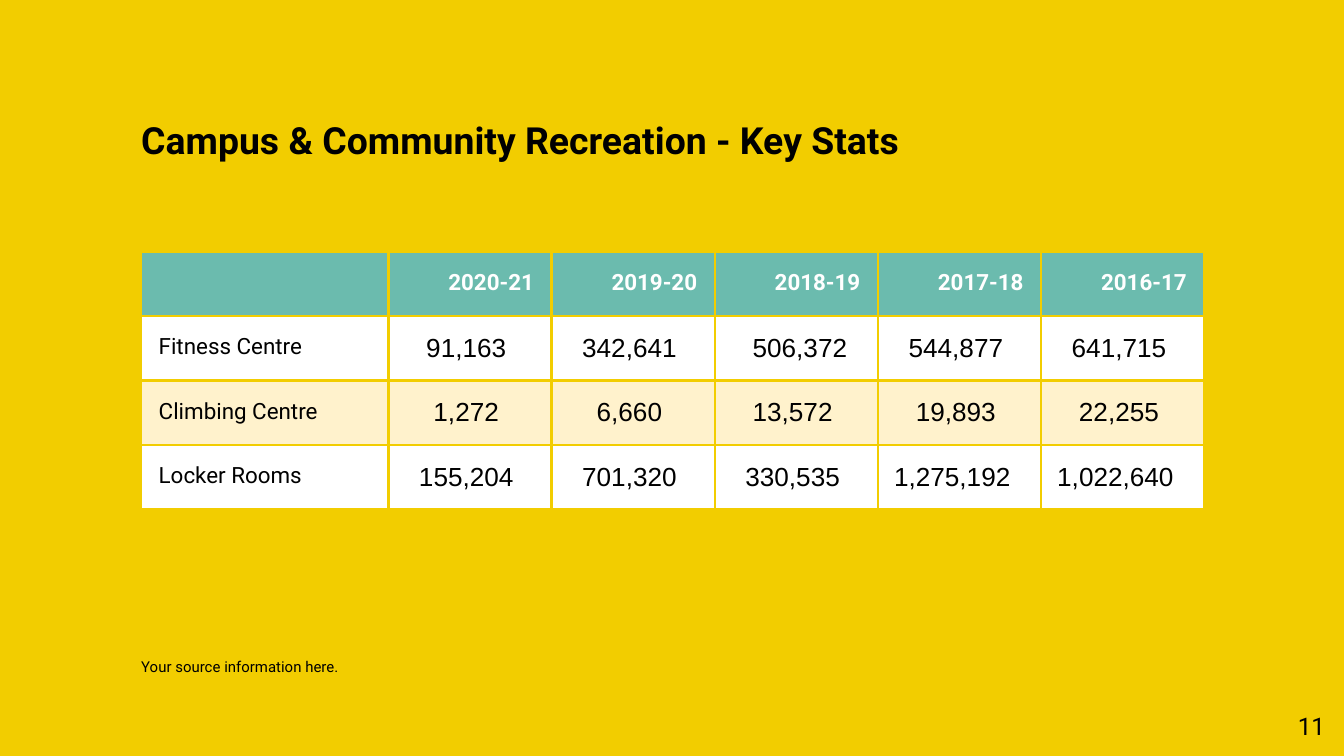
from lxml.etree import SubElement
from pptx import Presentation
from pptx.dml.color import RGBColor
from pptx.enum.text import MSO_ANCHOR, PP_ALIGN
from pptx.oxml.ns import qn
from pptx.util import Cm, Pt

YELLOW, TEAL, CREAM, WHITE, BLACK = "F2CD00", "6BBBAE", "FFF2CC", "FFFFFF", "000000"

TITLE = "Campus & Community Recreation - Key Stats"
SOURCE = "Your source information here."
PAGE_NUMBER = "11"
ROWS = [
    ["", "2020-21", "2019-20", "2018-19", "2017-18", "2016-17"],
    ["Fitness Centre", "91,163", "342,641", "506,372", "544,877", "641,715"],
    ["Climbing Centre", "1,272", "6,660", "13,572", "19,893", "22,255"],
    ["Locker Rooms", "155,204", "701,320", "330,535", "1,275,192", "1,022,640"],
]
ROW_FILLS = [TEAL, WHITE, CREAM, WHITE]
EXTRA_INDENT = {(1, 3): 1}  # cells set further in, in comma widths

LEFT, WIDTH = 2.67, 20.09
TABLE_TOP, ROW_HEIGHT = 4.75, 1.22
LABEL_WIDTH, YEAR_WIDTH = 4.67, 3.084
SMALL_INSET, WIDE_INSET = 0.03, 0.33
COMMA_WIDTH = 0.137  # a comma in Arial 14; a digit is twice as wide


def color(value):
    return RGBColor.from_string(value)


def format_text(text_frame, size, font="Roboto", fill=BLACK, bold=False,
                align=PP_ALIGN.LEFT, line_spacing=None):
    for paragraph in text_frame.paragraphs:
        paragraph.alignment = align
        if line_spacing:
            paragraph.line_spacing = line_spacing
        for run in paragraph.runs:
            run.font.name = font
            run.font.size = Pt(size)
            run.font.bold = bold
            run.font.color.rgb = color(fill)


def add_text(slide, text, left, top, width, height, size, inset=0,
             anchor=MSO_ANCHOR.TOP, **style):
    text_frame = slide.shapes.add_textbox(Cm(left), Cm(top), Cm(width), Cm(height)).text_frame
    text_frame.word_wrap = True
    text_frame.vertical_anchor = anchor
    text_frame.margin_left = text_frame.margin_right = Cm(inset)
    text_frame.margin_top = text_frame.margin_bottom = Cm(inset)
    text_frame.text = text
    format_text(text_frame, size, **style)


def add_borders(cell):
    properties = cell._tc.get_or_add_tcPr()
    for position, side in enumerate(("lnL", "lnR", "lnT", "lnB")):
        line = SubElement(properties, qn(f"a:{side}"), w=str(Pt(1.5)))
        fill = SubElement(line, qn("a:solidFill"))
        SubElement(fill, qn("a:srgbClr"), val=YELLOW)
        properties.insert(position, line)  # borders come before the fill


def fill_cell(cell, text, row, column):
    cell.fill.solid()
    cell.fill.fore_color.rgb = color(ROW_FILLS[row])
    add_borders(cell)
    cell.vertical_anchor = MSO_ANCHOR.MIDDLE
    cell.margin_top = cell.margin_bottom = Cm(SMALL_INSET)
    left, right = SMALL_INSET, WIDE_INSET
    style = {"size": 12, "line_spacing": 0.85}
    if row == 0:
        style.update(fill=WHITE, bold=True, align=PP_ALIGN.RIGHT)
    elif column == 0:
        left, right = WIDE_INSET, SMALL_INSET
    else:
        # Shorter numbers start further in, which keeps them about centred
        left += (11 - len(text) + EXTRA_INDENT.get((row, column), 0)) * COMMA_WIDTH
        style = {"size": 14, "font": "Arial"}
    cell.margin_left, cell.margin_right = Cm(left), Cm(right)
    cell.text_frame.text = text
    format_text(cell.text_frame, **style)


def add_stats_table(slide):
    table = slide.shapes.add_table(
        len(ROWS), len(ROWS[0]), Cm(LEFT), Cm(TABLE_TOP),
        Cm(WIDTH), Cm(ROW_HEIGHT * len(ROWS))).table
    for index, column in enumerate(table.columns):
        column.width = Cm(YEAR_WIDTH if index else LABEL_WIDTH)
    for row, values in enumerate(ROWS):
        table.rows[row].height = Cm(ROW_HEIGHT)
        for column, text in enumerate(values):
            fill_cell(table.cell(row, column), text, row, column)


def main():
    presentation = Presentation()
    presentation.slide_width, presentation.slide_height = Cm(25.4), Cm(14.29)
    slide = presentation.slides.add_slide(presentation.slide_layouts[6])
    slide.background.fill.solid()
    slide.background.fill.fore_color.rgb = color(YELLOW)

    add_text(slide, TITLE, LEFT, 2.21, WIDTH, 2.21, 20, bold=True)
    add_text(slide, SOURCE, LEFT, 12.45, WIDTH, 0.51, 8, line_spacing=0.95)
    add_stats_table(slide)
    add_text(slide, PAGE_NUMBER, 23.77, 13.18, 1.52, 1.09, 13, inset=0.25,
             anchor=MSO_ANCHOR.MIDDLE, align=PP_ALIGN.RIGHT)
    presentation.save("out.pptx")


if __name__ == "__main__":
    main()
